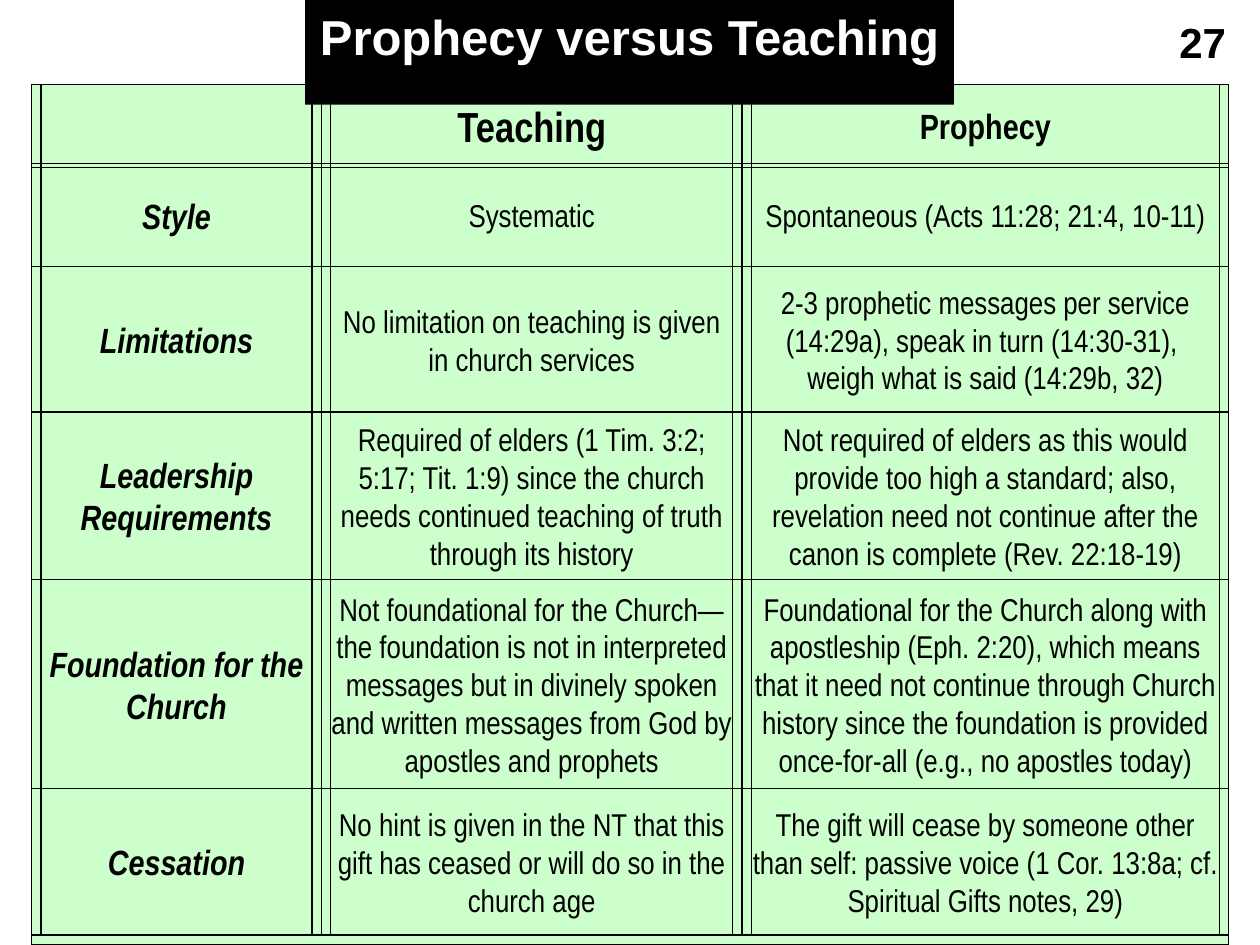
from itertools import accumulate

from pptx import Presentation
from pptx.dml.color import RGBColor
from pptx.enum.shapes import MSO_SHAPE as Shape
from pptx.enum.text import MSO_ANCHOR as Anchor, MSO_AUTO_SIZE as AutoSize, PP_ALIGN as Align
from pptx.util import Cm, Pt

BLACK, WHITE, GREEN = "000000", "FFFFFF", "CCFFCC"

# Grid geometry in centimetres
LEFT, TOP, SLIDE_HEIGHT = 0.64, 1.7, 19.05
COLUMN_WIDTHS = [5.84, 8.48, 9.81]
ROW_HEIGHTS = [1.6, 2.08, 2.93, 3.37, 4.22, 2.95]
GUTTER = 0.19
HEADER_OVERLAP = 0.08

# Text formats
HEADING = {"name": "Arial", "bold": True}
TEACHING = {"name": "Arial Narrow", "size": Pt(24), "bold": True}
PROPHECY = {**TEACHING, "size": Pt(20)}
LABEL = {**PROPHECY, "italic": True}
BODY = {"name": "Arial Narrow", "size": Pt(18), "bold": False}
LINE_PITCH = 1.2

ROWS = [
    ("", "Teaching", "Prophecy"),
    ("Style", "Systematic", "Spontaneous (Acts 11:28; 21:4, 10-11)"),
    ("Limitations",
     "No limitation on teaching is given in church services",
     "2-3 prophetic messages per service (14:29a), speak in turn (14:30-31), \v"
     "weigh what is said (14:29b, 32)"),
    ("Leadership Requirements",
     "Required of elders (1 Tim. 3:2; 5:17; Tit. 1:9) since the church needs "
     "continued teaching of truth through its history",
     "Not required of elders as this would provide too high a standard; also, "
     "revelation need not continue after the canon is complete (Rev. 22:18-19)"),
    ("Foundation for the Church",
     "Not foundational for the Church—the foundation is not in interpreted messages "
     "but in divinely spoken and written messages from God by apostles and prophets",
     "Foundational for the Church along with apostleship (Eph. 2:20), which means "
     "that it need not continue through Church history since the foundation is "
     "provided once-for-all (e.g., no apostles today)"),
    ("Cessation",
     "No hint is given in the NT that this gift has ceased or will do so in the church age",
     "The gift will cease by someone other than self: passive voice "
     "(1 Cor. 13:8a; cf. Spiritual Gifts notes, 29)"),
]


def rgb(color):
    return RGBColor.from_string(color)


def set_fill(shape, color):
    if color:
        shape.fill.solid()
        shape.fill.fore_color.rgb = rgb(color)
    else:
        shape.fill.background()


def write_text(frame, text, text_format, color=BLACK):
    paragraph = frame.paragraphs[0]
    paragraph.text = text
    paragraph.alignment = Align.CENTER
    for font in [paragraph.font] + [run.font for run in paragraph.runs]:
        for name, value in text_format.items():
            setattr(font, name, value)
        font.color.rgb = rgb(color)
    return paragraph


def add_rectangle(slide, box, line_width, fill=None):
    shape = slide.shapes.add_shape(Shape.RECTANGLE, *map(Cm, box))
    shape.shadow.inherit = False
    set_fill(shape, fill)
    shape.line.color.rgb = rgb(BLACK)
    shape.line.width = Pt(line_width)
    return shape


def add_cell(slide, left, top, width, height, text, text_format):
    """Inner frame with the text, and a hairline frame around it."""
    inner = add_rectangle(slide, (left + GUTTER, top, width - 2 * GUTTER, height), 0.75)
    add_rectangle(slide, (left, top, width, height), 0)
    if not text:
        return
    frame = inner.text_frame
    frame_settings = {
        "margin_left": 0, "margin_right": 0, "margin_top": 0, "margin_bottom": 0,
        "word_wrap": True, "vertical_anchor": Anchor.MIDDLE,
    }
    for name, value in frame_settings.items():
        setattr(frame, name, value)
    paragraph = write_text(frame, text, text_format)
    paragraph.line_spacing = Pt(text_format["size"].pt * LINE_PITCH)


def cell_format(row, column):
    if row == 0:
        return PROPHECY if column == 2 else TEACHING
    return LABEL if column == 0 else BODY


def add_comparison_grid(slide):
    lefts = list(accumulate(COLUMN_WIDTHS[:-1], initial=LEFT))
    tops = accumulate(ROW_HEIGHTS[:-1], initial=TOP)
    for row, (top, height, texts) in enumerate(zip(tops, ROW_HEIGHTS, ROWS)):
        # The header reaches into the next row, which doubles its lower line
        if row == 0:
            height += HEADER_OVERLAP
        for column, (left, width, text) in enumerate(zip(lefts, COLUMN_WIDTHS, texts)):
            add_cell(slide, left, top, width, height, text, cell_format(row, column))


def add_text(slide, box, text, size, color=BLACK, fill=None):
    shape = slide.shapes.add_textbox(*map(Cm, box))
    set_fill(shape, fill)
    frame = shape.text_frame
    frame.word_wrap = False
    frame.auto_size = AutoSize.NONE
    frame.vertical_anchor = Anchor.TOP
    write_text(frame, text, {**HEADING, "size": Pt(size)}, color)


def main():
    presentation = Presentation()
    presentation.slide_width, presentation.slide_height = Cm(25.4), Cm(SLIDE_HEIGHT)
    slide = presentation.slides.add_slide(presentation.slide_layouts[6])

    # Green panel reaching the bottom of the slide, with the grid on it
    panel = (LEFT, TOP, sum(COLUMN_WIDTHS), SLIDE_HEIGHT - TOP)
    add_rectangle(slide, panel, 0.75, GREEN)
    add_comparison_grid(slide)

    # Page number and title
    add_text(slide, (23.52, 0.2, 1.45, 1.27), "27", 24)
    add_text(slide, (6.15, 0, 13.08, 2.11), "Prophecy versus Teaching", 28, WHITE, BLACK)

    presentation.save("out.pptx")


if __name__ == "__main__":
    main()
